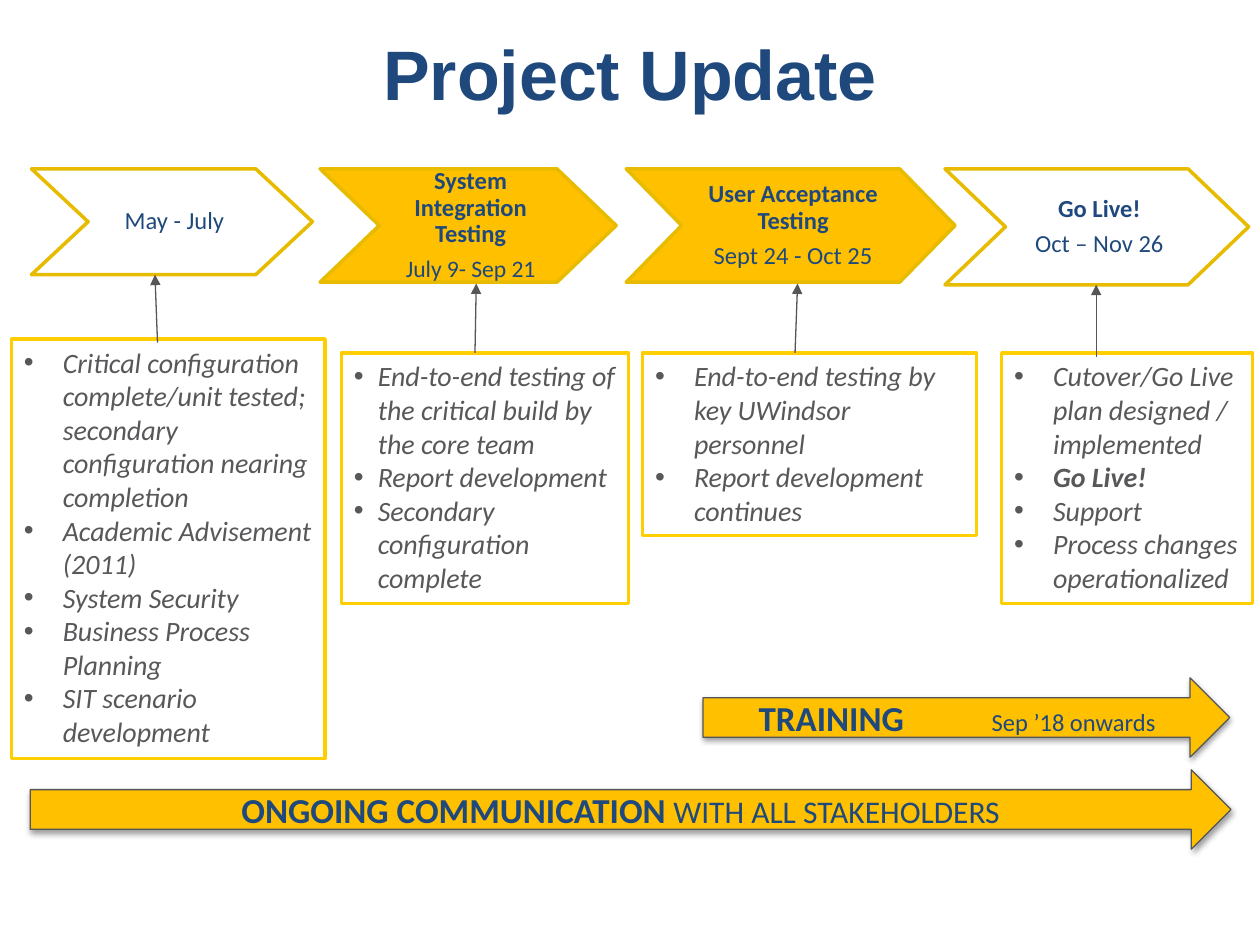
"""Builds the Project Update slide: four project stages above two ongoing activities."""
from lxml import etree
from pptx import Presentation
from pptx import util as u
from pptx.dml.color import RGBColor
from pptx.enum import shapes, text
from pptx.oxml import ns, parse_xml

COLORS = {"navy": "1F497D", "amber": "FFC000", "gold": "E7BB00", "yellow": "FFCE00",
          "grey": "565659", "body": "58585B", "white": "FFFFFF"}
STAGE_FRAME = {"margin_left": u.Inches(0.46), "margin_right": u.Inches(0.42),
               "margin_top": u.Inches(0.02), "margin_bottom": u.Inches(0.02),
               "vertical_anchor": text.MSO_ANCHOR.MIDDLE, "word_wrap": True}
STAGE_PARAGRAPH = {"alignment": text.PP_ALIGN.CENTER, "line_spacing": 0.9,
                   "space_after": u.Pt(4.9)}
TASK_FRAME = {"vertical_anchor": text.MSO_ANCHOR.TOP, "word_wrap": True,
              "auto_size": text.MSO_AUTO_SIZE.SHAPE_TO_FIT_TEXT}
SHADOW = (f'<a:effectLst {ns.nsdecls("a")}><a:outerShdw blurRad="39370" dist="20320" '
          'dir="5400000" rotWithShape="0"><a:srgbClr val="000000"><a:alpha val="38000"/>'
          '</a:srgbClr></a:outerShdw></a:effectLst>')


def add_run(paragraph, wording, color, size, name="Calibri", **font_values):
    run = paragraph.add_run()
    run.text = wording
    run.font.color.rgb = RGBColor.from_string(COLORS[color])
    for key, value in {"size": u.Pt(size), "name": name, **font_values}.items():
        setattr(run.font, key, value)


def paint(shape, fill, line, width, frame_values):
    shape.shadow.inherit = False
    shape.fill.solid()
    shape.fill.fore_color.rgb = RGBColor.from_string(COLORS[fill])
    shape.line.color.rgb = RGBColor.from_string(COLORS[line])
    shape.line.width = u.Pt(width)
    for key, value in frame_values.items():
        setattr(shape.text_frame, key, value)


prs = Presentation()
prs.slide_width, prs.slide_height = u.Inches(10), u.Inches(7.5)
slide = prs.slides.add_slide(prs.slide_layouts[5])

title = slide.shapes.title
for key, value in {"left": 0.5, "top": -0.05, "width": 9, "height": 1.25}.items():
    setattr(title, key, u.Inches(value))
title.text_frame.vertical_anchor = text.MSO_ANCHOR.MIDDLE
heading = title.text_frame.paragraphs[0]
heading.alignment = text.PP_ALIGN.CENTER
add_run(heading, "Project Update", "navy", 40, "Arial", bold=True)

stages = [
    {"chevron": (0.25, 2.23, 0.84, 0.45), "fill": "white",
     "label": [("May - July", 14, False)],
     "box": (0.09, 2.69, 2.49, 3.33), "indent": 0.31, "link": (1.25, 2.72, 1.23, 2.18),
     "tasks": ["Critical configuration complete/unit tested; secondary configuration "
               "nearing completion", "Academic Advisement (2011)", "System Security",
               "Business Process Planning", "SIT scenario development"]},
    {"chevron": (2.54, 2.35, 0.9, 0.47), "fill": "amber",
     "label": [("System Integration Testing", 14, True), ("July 9- Sep 21", 13.5, False)],
     "box": (2.71, 2.8, 2.28, 1.99), "indent": 0.19, "link": (3.77, 2.8, 3.78, 2.25),
     "tasks": ["End-to-end testing of the critical build by the core team",
               "Report development", "Secondary configuration complete"]},
    {"chevron": (4.97, 2.61, 0.9, 0.44), "fill": "amber",
     "label": [("User Acceptance Testing", 14, True), ("Sept 24 - Oct 25", 14, False)],
     "box": (5.1, 2.8, 2.65, 1.45), "indent": 0.31, "link": (6.31, 2.8, 6.33, 2.25),
     "tasks": ["End-to-end testing by key UWindsor personnel",
               "Report development continues"]},
    {"chevron": (7.5, 2.41, 0.92, 0.48), "fill": "white",
     "label": [("Go Live!", 14, True), ("Oct – Nov 26", 14, False)],
     "box": (7.95, 2.8, 1.99, 1.99), "indent": 0.31, "link": (8.7, 2.83, 8.7, 2.26),
     "tasks": ["Cutover/Go Live plan designed / implemented", "Go Live!", "Support",
               "Process changes operationalized"]},
]
stage_top = 1.34

for stage in stages:
    left, width, height, notch = stage["chevron"]
    right, middle, bottom = left + width, stage_top + height / 2, stage_top + height
    outline = [(right - notch, stage_top), (right, middle), (right - notch, bottom),
               (left, bottom), (left + notch, middle)]
    builder = slide.shapes.build_freeform(u.Inches(left), u.Inches(stage_top))
    builder.add_line_segments([(u.Inches(x), u.Inches(y)) for x, y in outline], close=True)
    chevron = builder.convert_to_shape()
    paint(chevron, stage["fill"], "gold", 2, STAGE_FRAME)
    for index, (wording, size, bold) in enumerate(stage["label"]):
        frame = chevron.text_frame
        paragraph = frame.add_paragraph() if index else frame.paragraphs[0]
        for key, value in STAGE_PARAGRAPH.items():
            setattr(paragraph, key, value)
        add_run(paragraph, wording, "navy", size, bold=bold)

    task_box = slide.shapes.add_shape(shapes.MSO_SHAPE.RECTANGLE, *map(u.Inches, stage["box"]))
    paint(task_box, "white", "yellow", 2, TASK_FRAME)
    for index, task in enumerate(stage["tasks"]):
        frame = task_box.text_frame
        paragraph = frame.add_paragraph() if index else frame.paragraphs[0]
        paragraph.alignment = text.PP_ALIGN.LEFT
        properties = paragraph._p.get_or_add_pPr()
        properties.set("marL", str(u.Inches(stage["indent"])))
        properties.set("indent", str(-u.Inches(stage["indent"])))
        etree.SubElement(properties, ns.qn("a:buFont"), typeface="Arial")
        etree.SubElement(properties, ns.qn("a:buChar"), char="•")
        add_run(paragraph, task, "body", 16, italic=True, bold=task == "Go Live!")

    link = slide.shapes.add_connector(shapes.MSO_CONNECTOR.STRAIGHT,
                                      *map(u.Inches, stage["link"]))
    link.line.color.rgb = RGBColor.from_string(COLORS["grey"])
    link.line.width = u.Pt(0.75)
    etree.SubElement(link.line._get_or_add_ln(), ns.qn("a:tailEnd"), type="triangle")
    etree.SubElement(link._element.spPr, ns.qn("a:effectLst"))

activities = [
    {"at": (0.24, 6.11, 9.53, 0.63), "align": text.PP_ALIGN.CENTER, "inset": 0.1, "tab": None,
     "runs": [("ONGOING COMMUNICATION", 20, True), (" WITH ALL STAKEHOLDERS", 18, False)]},
    {"at": (5.58, 5.38, 4.18, 0.63), "align": text.PP_ALIGN.LEFT, "inset": 0.44, "tab": 1.85,
     "runs": [("TRAINING", 20, True), ("\tSep ’18 onwards", 14, False)]},
]

for activity in activities:
    arrow = slide.shapes.add_shape(shapes.MSO_SHAPE.RIGHT_ARROW, *map(u.Inches, activity["at"]))
    paint(arrow, "amber", "grey", 0.75, {"vertical_anchor": text.MSO_ANCHOR.MIDDLE,
                                         "word_wrap": True,
                                         "margin_left": u.Inches(activity["inset"])})
    properties = arrow._element.spPr
    properties.replace(properties.find(ns.qn("a:effectLst")), parse_xml(SHADOW))
    paragraph = arrow.text_frame.paragraphs[0]
    paragraph.alignment = activity["align"]
    if activity["tab"]:
        tabs = etree.SubElement(paragraph._p.get_or_add_pPr(), ns.qn("a:tabLst"))
        etree.SubElement(tabs, ns.qn("a:tab"), pos=str(u.Inches(activity["tab"])), algn="l")
    for wording, size, bold in activity["runs"]:
        add_run(paragraph, wording, "navy", size, bold=bold)

prs.save("out.pptx")
